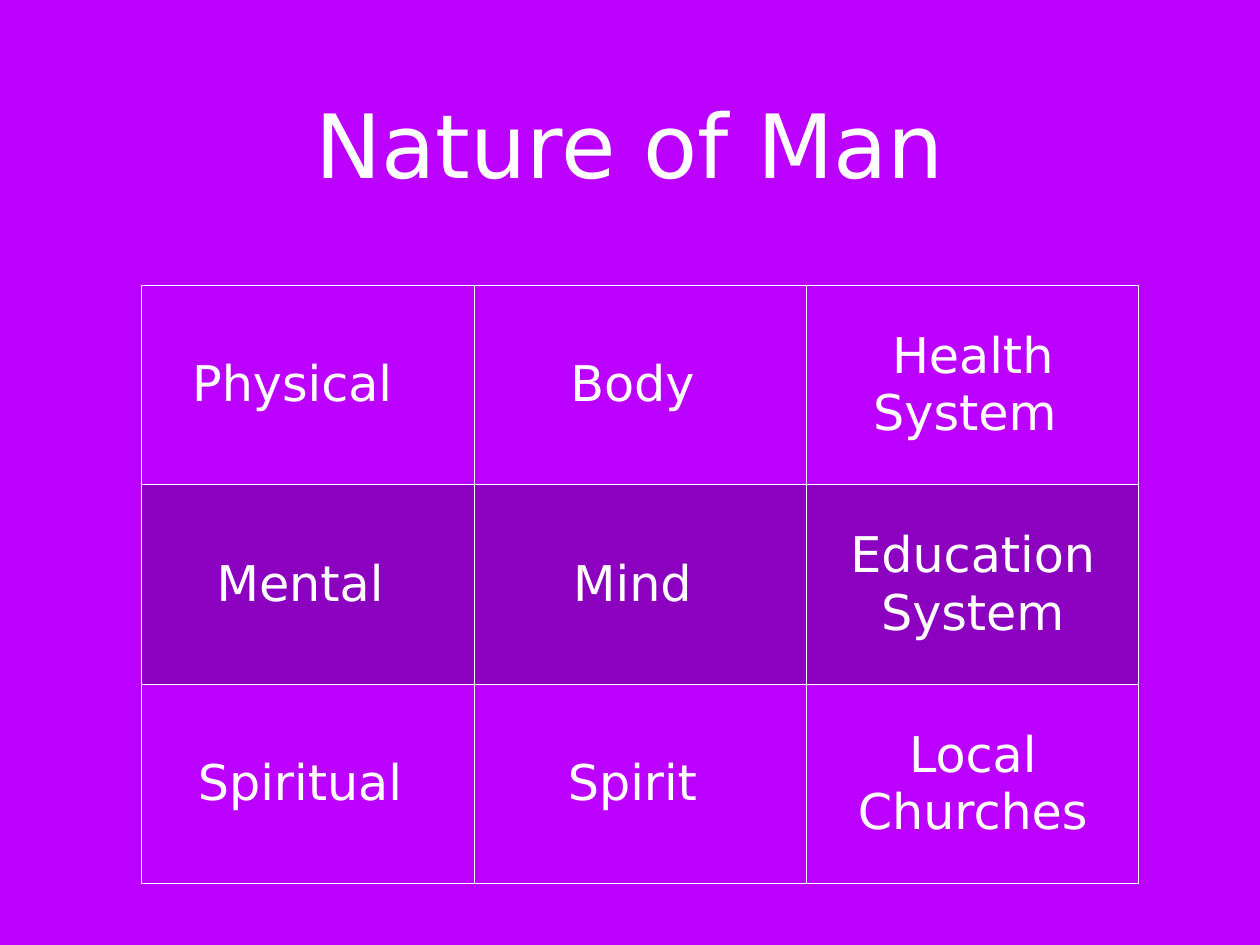
from dataclasses import dataclass

from lxml import etree
from pptx import Presentation
from pptx import util as u
from pptx.dml.color import RGBColor
from pptx.enum import text
from pptx.oxml import ns

FONT = "DejaVu Sans"
PURPLE = "BC00FF"
WHITE = "FFFFFF"
BLACK = "000000"
CELL_INSET = 0.16
COLUMN_WIDTH = 9.53
ROW_HEIGHT = 5.72


@dataclass
class Entry:
    label: str
    extra_right: float = 0


@dataclass
class Aspect:
    entries: list[Entry]
    shaded: bool = False


ASPECTS = [
    Aspect([Entry("Physical ", 0.45), Entry("Body "), Entry("Health System ")]),
    Aspect([Entry("Mental "), Entry("Mind "), Entry("Education System")], shaded=True),
    Aspect([Entry("Spiritual "), Entry("Spirit "), Entry("Local Churches")]),
]


def color(value: str) -> RGBColor:
    return RGBColor.from_string(value)


def set_insets(target, inset: float, extra_right: float = 0) -> None:
    target.margin_left = target.margin_top = target.margin_bottom = u.Cm(inset)
    target.margin_right = u.Cm(inset + extra_right)


def write_centered(frame, label: str, size: float) -> None:
    paragraph = frame.paragraphs[0]
    paragraph.alignment = text.PP_ALIGN.CENTER
    run = paragraph.add_run()
    run.text = label
    run.font.name = FONT
    run.font.size = u.Pt(size)
    run.font.bold = False
    run.font.color.rgb = color(WHITE)


def set_opacity(color_element, percent: int) -> None:
    alpha = etree.SubElement(color_element, ns.qn("a:alpha"))
    alpha.set("val", str(percent * 1000))


def add_borders(cell) -> None:
    properties = cell._tc.get_or_add_tcPr()
    for side in ("lnL", "lnR", "lnT", "lnB"):
        line = etree.SubElement(properties, ns.qn(f"a:{side}"), w=str(u.Pt(1)))
        fill = etree.SubElement(line, ns.qn("a:solidFill"))
        line_color = etree.SubElement(fill, ns.qn("a:srgbClr"), val=WHITE)
        set_opacity(line_color, 50)
        etree.SubElement(line, ns.qn("a:prstDash"), val="solid")


def fill_cell(cell, shaded: bool) -> None:
    if not shaded:
        cell.fill.background()
        return
    cell.fill.solid()
    cell.fill.fore_color.rgb = color(BLACK)
    set_opacity(cell._tc.tcPr.find(ns.qn("a:solidFill"))[0], 25)


def add_title(slide, title: str) -> None:
    box = slide.shapes.add_textbox(u.Cm(3.53), u.Cm(0.56), u.Cm(29.06), u.Cm(7.06))
    frame = box.text_frame
    frame.word_wrap = True
    frame.vertical_anchor = text.MSO_ANCHOR.MIDDLE
    set_insets(frame, 0)
    write_centered(frame, title, 72)


def add_aspect_table(slide, aspects: list[Aspect]) -> None:
    row_count, column_count = len(aspects), len(aspects[0].entries)
    table = slide.shapes.add_table(
        row_count, column_count, u.Cm(4.06), u.Cm(8.18),
        u.Cm(COLUMN_WIDTH * column_count), u.Cm(ROW_HEIGHT * row_count),
    ).table
    table.first_row = table.horz_banding = False
    for column in table.columns:
        column.width = u.Cm(COLUMN_WIDTH)
    for row, aspect in zip(table.rows, aspects):
        row.height = u.Cm(ROW_HEIGHT)
        for cell, entry in zip(row.cells, aspect.entries):
            cell.vertical_anchor = text.MSO_ANCHOR.MIDDLE
            set_insets(cell, CELL_INSET, entry.extra_right)
            write_centered(cell.text_frame, entry.label, 40)
            add_borders(cell)
            fill_cell(cell, aspect.shaded)


def main() -> None:
    presentation = Presentation()
    presentation.slide_width = u.Cm(36.12)
    presentation.slide_height = u.Cm(27.1)
    slide = presentation.slides.add_slide(presentation.slide_layouts[6])
    slide.background.fill.solid()
    slide.background.fill.fore_color.rgb = color(PURPLE)
    add_title(slide, "Nature of Man")
    add_aspect_table(slide, ASPECTS)
    presentation.save("out.pptx")


if __name__ == "__main__":
    main()
